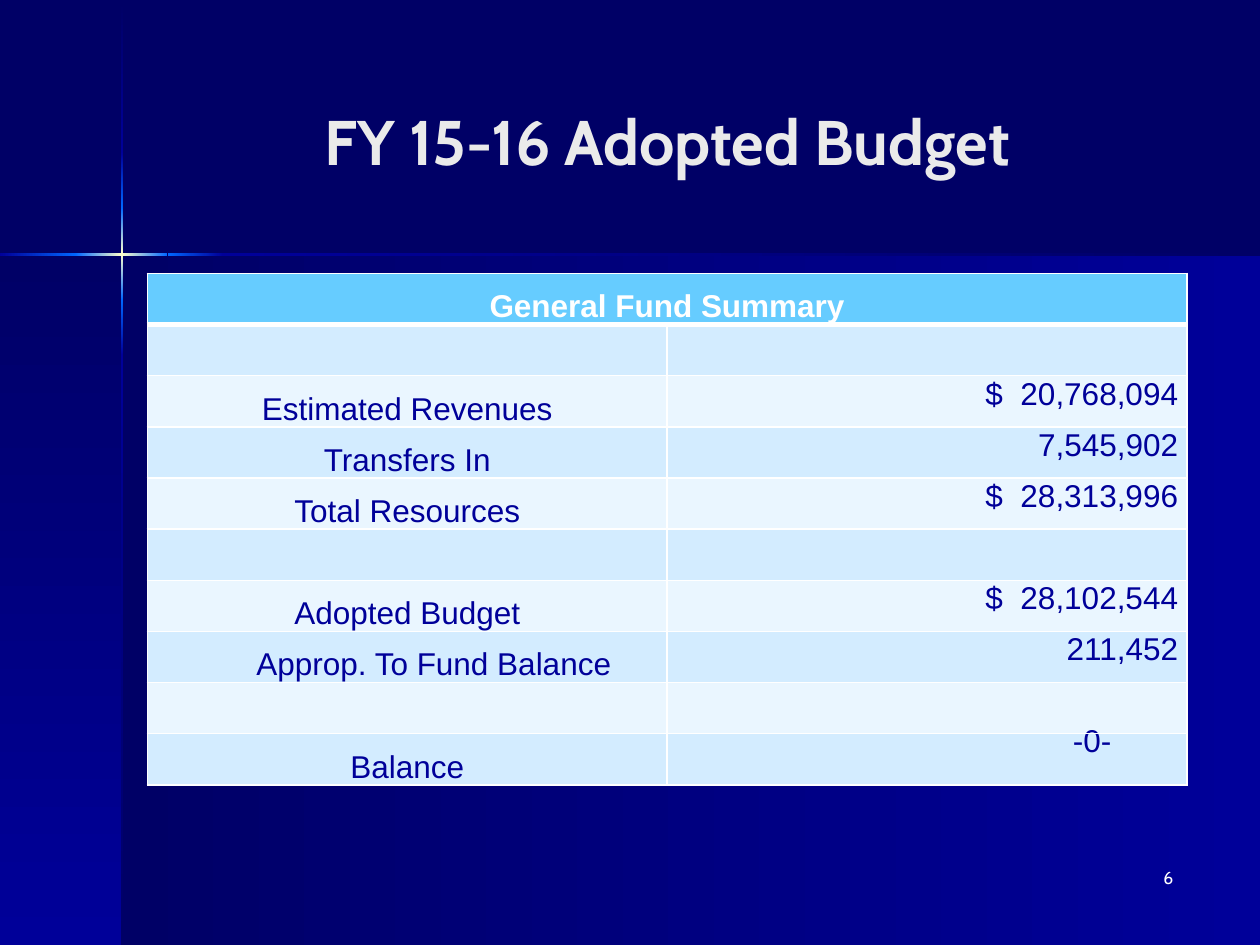
from typing import NamedTuple

from lxml.etree import SubElement
from pptx import Presentation
from pptx.dml.color import RGBColor
from pptx.enum.shapes import MSO_SHAPE as Shape
from pptx.enum.text import MSO_ANCHOR as Anchor, PP_ALIGN as Align
from pptx.oxml.ns import qn
from pptx.util import Inches, Pt

NIGHT, NAVY, BLUE, GLOW = "000066", "000099", "0066FF", "FFFFCC"
WHITE, SKY, PALE, PALER = "FFFFFF", "66CCFF", "D3ECFF", "EAF6FF"
ACROSS, DOWN = 0, 270
BEAM = 0.02


class Band(NamedTuple):
    left: float
    top: float
    width: float
    height: float
    angle: int
    colors: tuple[str, ...]


class Entry(NamedTuple):
    label: str = ""
    amount: str = ""
    label_indent: float = 0
    amount_indent: float = 0
    amount_lift: float = 0


def column_beam(top: float, height: float, *colors: str) -> Band:
    return Band(0.96, top, BEAM, height, DOWN, colors)


def row_beam(left: float, width: float, *colors: str) -> Band:
    return Band(left, 2.01, width, BEAM, ACROSS, colors)


BANDS = [
    Band(0.97, 2.02, 9.03, 5.48, ACROSS, (NIGHT, NAVY)),
    Band(0, 2.02, 0.97, 5.48, DOWN, (NIGHT, NAVY)),
    column_beam(0.01, 1.2, NIGHT, NAVY),
    column_beam(2.82, 4.68, NAVY, NIGHT),
    row_beam(1.77, 8.23, NAVY, NIGHT),
    column_beam(2.38, 0.44, BLUE, NAVY),
    column_beam(1.21, 0.44, NAVY, BLUE),
    column_beam(1.65, 0.73, BLUE, GLOW, BLUE),
    row_beam(0, 0.61, NAVY, BLUE),
    row_beam(1.33, 0.44, BLUE, NAVY),
    row_beam(0.6, 0.73, BLUE, GLOW, BLUE),
]

ENTRIES = [
    Entry(),
    Entry("Estimated Revenues", "$  20,768,094"),
    Entry("Transfers In", "7,545,902"),
    Entry("Total Resources", "$  28,313,996"),
    Entry(),
    Entry("Adopted Budget", "$  28,102,544"),
    Entry("Approp. To Fund Balance", "211,452", label_indent=0.42),
    Entry(),
    Entry("Balance", "-0-", amount_indent=0.53, amount_lift=0.17),
]


def rgb(color: str) -> RGBColor:
    return RGBColor.from_string(color)


def add_text(frame, text: str, size: float, font: str, color: str,
             align: Align, bold: bool = False):
    paragraph = frame.paragraphs[0]
    paragraph.alignment = align
    run = paragraph.add_run()
    run.text = text
    run.font.size = Pt(size)
    run.font.name = font
    run.font.bold = bold
    run.font.color.rgb = rgb(color)
    return paragraph


def draw_band(slide, band: Band) -> None:
    shape = slide.shapes.add_shape(
        Shape.RECTANGLE, Inches(band.left), Inches(band.top),
        Inches(band.width), Inches(band.height))
    shape.shadow.inherit = False
    shape.line.fill.background()
    shape.fill.gradient()
    shape.fill.gradient_angle = band.angle
    stops = next(shape.element.iter(qn("a:gsLst")))
    stops.clear()
    for index, color in enumerate(band.colors):
        position = 100000 * index // (len(band.colors) - 1)
        stop = SubElement(stops, qn("a:gs"), pos=str(position))
        SubElement(stop, qn("a:srgbClr"), val=color)


def style_cell(cell, fill: str, top: float = 1, bottom: float = 1) -> None:
    properties = cell._tc.get_or_add_tcPr()
    for side, width in (("L", 1), ("R", 1), ("T", top), ("B", bottom)):
        line = SubElement(properties, qn(f"a:ln{side}"), w=str(Pt(width)))
        solid = SubElement(line, qn("a:solidFill"))
        SubElement(solid, qn("a:srgbClr"), val=WHITE)
    cell.fill.solid()
    cell.fill.fore_color.rgb = rgb(fill)


def write_cell(cell, text: str, color: str, align: Align, anchor: Anchor,
               bold: bool = False, left: float = 0, right: float = 0,
               bottom: float = 0) -> None:
    cell.vertical_anchor = anchor
    cell.margin_left = Inches(0.07 + left)
    cell.margin_right = Inches(0.07 + right)
    cell.margin_top = 0
    cell.margin_bottom = Inches(bottom)
    paragraph = add_text(cell.text_frame, text, 18, "Arial", color, align, bold)
    paragraph.line_spacing = Pt(12)


def draw_budget_table(slide) -> None:
    table = slide.shapes.add_table(
        len(ENTRIES) + 1, 2, Inches(1.17), Inches(2.17),
        Inches(8.25), Inches(4.06)).table
    for cell in table.rows[0].cells:
        style_cell(cell, SKY, bottom=3)
    heading = table.cell(0, 0)
    heading.merge(table.cell(0, 1))
    write_cell(heading, "General Fund Summary", WHITE, Align.CENTER,
               Anchor.BOTTOM, bold=True)
    for row, entry in enumerate(ENTRIES, start=1):
        label, amount = table.rows[row].cells
        for cell in (label, amount):
            style_cell(cell, PALE if row % 2 else PALER, top=3 if row == 1 else 1)
        if entry.label:
            write_cell(label, entry.label, NAVY, Align.CENTER, Anchor.BOTTOM,
                       left=entry.label_indent)
            write_cell(amount, entry.amount, NAVY, Align.RIGHT, Anchor.MIDDLE,
                       right=entry.amount_indent, bottom=entry.amount_lift)


def main() -> None:
    presentation = Presentation()
    presentation.slide_width, presentation.slide_height = Inches(10), Inches(7.5)
    slide = presentation.slides.add_slide(presentation.slide_layouts[5])
    slide.background.fill.solid()
    slide.background.fill.fore_color.rgb = rgb(NIGHT)
    for band in BANDS:
        draw_band(slide, band)

    title = slide.shapes.title
    title.left, title.top = Inches(1.17), Inches(0.33)
    title.width, title.height = Inches(8.25), Inches(1.57)
    title.text_frame.vertical_anchor = Anchor.MIDDLE
    add_text(title.text_frame, "FY 15-16 Adopted Budget", 36, "Cabin",
             "EAEAEA", Align.CENTER, bold=True)

    draw_budget_table(slide)

    number = slide.shapes.add_textbox(
        Inches(7.33), Inches(6.83), Inches(2.08), Inches(0.5))
    number.text_frame.word_wrap = True
    add_text(number.text_frame, "6", 10, "Cabin", WHITE, Align.RIGHT)
    presentation.save("out.pptx")


if __name__ == "__main__":
    main()
